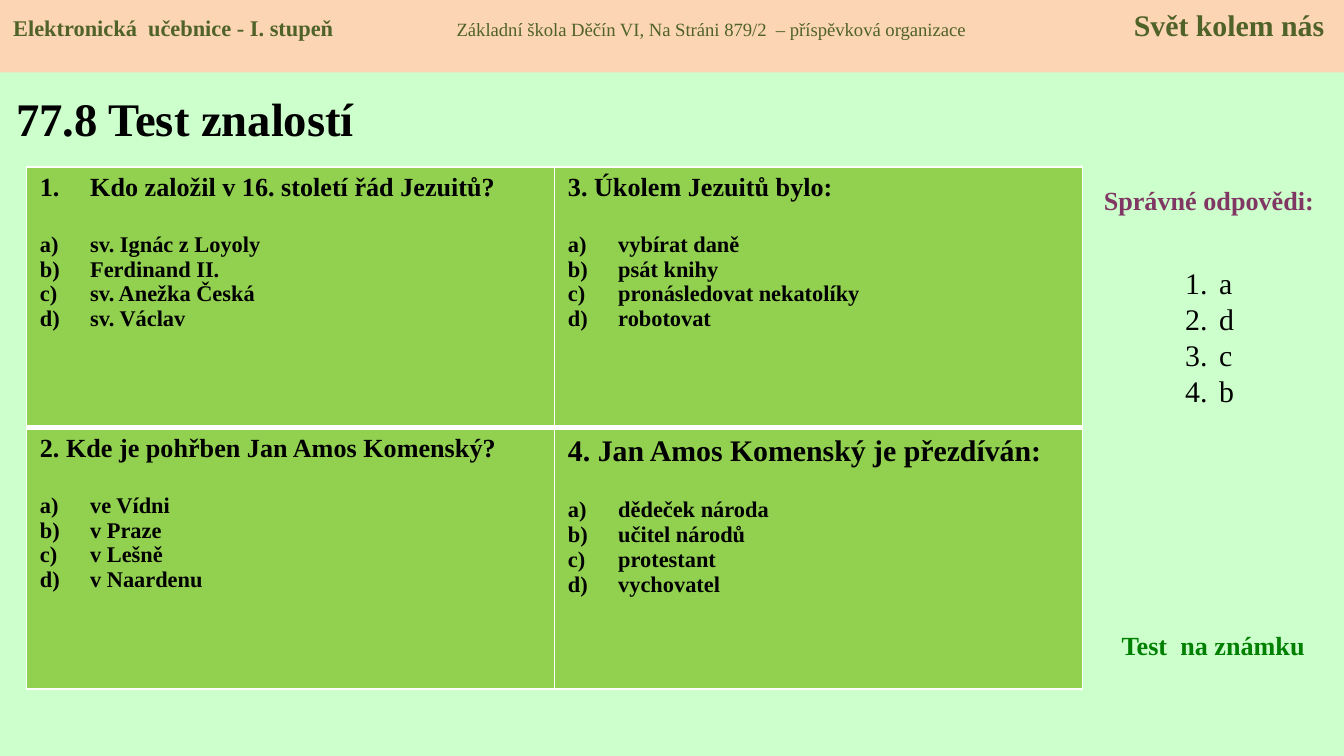
from dataclasses import dataclass
from pptx import Presentation
from pptx.dml.color import RGBColor as RGB
from pptx.enum.shapes import MSO_SHAPE as Shape
from pptx.enum.text import MSO_ANCHOR as Anchor, PP_ALIGN as Align
from pptx.oxml.ns import qn
from pptx.util import Cm, Pt
from lxml.etree import SubElement as Sub


@dataclass
class Theme:
    font: str = "Times New Roman"
    page: str = "CCFFCC"
    band: str = "FCD5B5"
    cell: str = "92D050"
    rule: str = "FFFFFF"
    ink: str = "000000"
    olive: str = "4F6228"
    plum: str = "813763"
    green: str = "008000"
    title: int = 25
    big: int = 16
    head: int = 14
    body: int = 12
    small: int = 10


look = Theme()


def style(run, size, color=look.ink, bold=True):
    font = run.font
    font.name, font.size, font.bold = look.font, Pt(size), bold
    font.color.rgb = RGB.from_string(color)


def number(para, kind, hang):
    props = para._p.get_or_add_pPr()
    props.set("marL", str(hang))
    props.set("indent", str(-hang))
    Sub(props, qn("a:buFont"), typeface="+mj-lt")
    Sub(props, qn("a:buAutoNum"), type=kind)


# Page
deck = Presentation()
deck.slide_width, deck.slide_height = Cm(25.4), Cm(14.28)
slide = deck.slides.add_slide(deck.slide_layouts[5])
slide.background.fill.solid()
slide.background.fill.fore_color.rgb = RGB.from_string(look.page)
shapes = slide.shapes

# Title
title = shapes.title
title.left, title.top, title.width, title.height = Cm(0.05), Cm(1.4), Cm(8.1), Cm(1.65)
frame = title.text_frame
frame.text = "77.8 Test znalostí"
frame.vertical_anchor = Anchor.MIDDLE
frame.paragraphs[0].alignment = Align.LEFT
style(frame.paragraphs[0].runs[0], look.title)

# Header band, its three parts set on tab stops
band = shapes.add_shape(Shape.RECTANGLE, 0, 0, deck.slide_width, Cm(1.37))
band.shadow.inherit = False
band.fill.solid()
band.fill.fore_color.rgb = RGB.from_string(look.band)
band.line.fill.background()
frame = band.text_frame
frame.vertical_anchor = Anchor.TOP
para = frame.paragraphs[0]
para.alignment = Align.LEFT
tabs = Sub(para._p.get_or_add_pPr(), qn("a:tabLst"))
for stop in (Cm(8.38), Cm(21.18)):
    Sub(tabs, qn("a:tab"), pos=str(stop), algn="l")
for text, size, bold in (
    ("Elektronická  učebnice - I. stupeň\t", look.body, True),
    ("Základní škola Děčín VI, Na Stráni 879/2  – příspěvková organizace\t", look.small, False),
    ("Svět kolem nás", look.big, True),
):
    run = para.add_run()
    run.text = text
    style(run, size, look.olive, bold)

# Test questions: row, column, question, size, choices
tests = (
    (0, 0, "Kdo založil v 16. století řád Jezuitů?", look.head,
     ("sv. Ignác z Loyoly", "Ferdinand II.", "sv. Anežka Česká", "sv. Václav")),
    (0, 1, "3. Úkolem Jezuitů bylo:", look.head,
     ("vybírat daně", "psát knihy", "pronásledovat nekatolíky", "robotovat")),
    (1, 0, "2. Kde je pohřben Jan Amos Komenský?", look.head,
     ("ve Vídni", "v Praze", "v Lešně", "v Naardenu")),
    (1, 1, "4. Jan Amos Komenský je přezdíván:", look.big,
     ("dědeček národa", "učitel národů", "protestant", "vychovatel")),
)
table = shapes.add_table(2, 2, Cm(0.5), Cm(3.15), Cm(19.96), Cm(9.86)).table
for row, col, quest, size, picks in tests:
    cell = table.cell(row, col)
    frame = cell.text_frame
    frame.text = "\n".join((quest, *picks))
    first, *rest = frame.paragraphs
    first.space_after = Pt(16)
    style(first.runs[0], size)
    if row == col == 0:
        number(first, "arabicPeriod", Cm(0.95))
    for para in rest:
        number(para, "alphaLcParenR", Cm(0.95))
        style(para.runs[0], look.body)

    # Thin white borders, with a thick rule between the rows
    props = cell._tc.get_or_add_tcPr()
    thick = "lnT" if row else "lnB"
    for side in ("lnL", "lnR", "lnT", "lnB"):
        line = Sub(props, qn("a:" + side), w=str(Pt(3 if side == thick else 1)))
        Sub(Sub(line, qn("a:solidFill")), qn("a:srgbClr"), val=look.rule)
    cell.fill.solid()
    cell.fill.fore_color.rgb = RGB.from_string(look.cell)

# Side labels
for text, left, top, wide, color in (
    ("Správné odpovědi:", 20.45, 3.35, 4.8, look.plum),
    ("Test  na známku", 20.93, 11.76, 4, look.green),
):
    frame = shapes.add_textbox(Cm(left), Cm(top), Cm(wide), Cm(0.86)).text_frame
    frame.word_wrap = True
    frame.text = text
    frame.paragraphs[0].alignment = Align.CENTER
    style(frame.paragraphs[0].runs[0], look.head, color)

# Right answers
frame = shapes.add_textbox(Cm(22.15), Cm(4.88), Cm(1.8), Cm(4.37)).text_frame
frame.word_wrap = True
frame.text = "a\nd\nc\nb"
for para in frame.paragraphs:
    number(para, "arabicPeriod", Cm(0.64))
    style(para.runs[0], look.big, bold=False)

deck.save("out.pptx")
